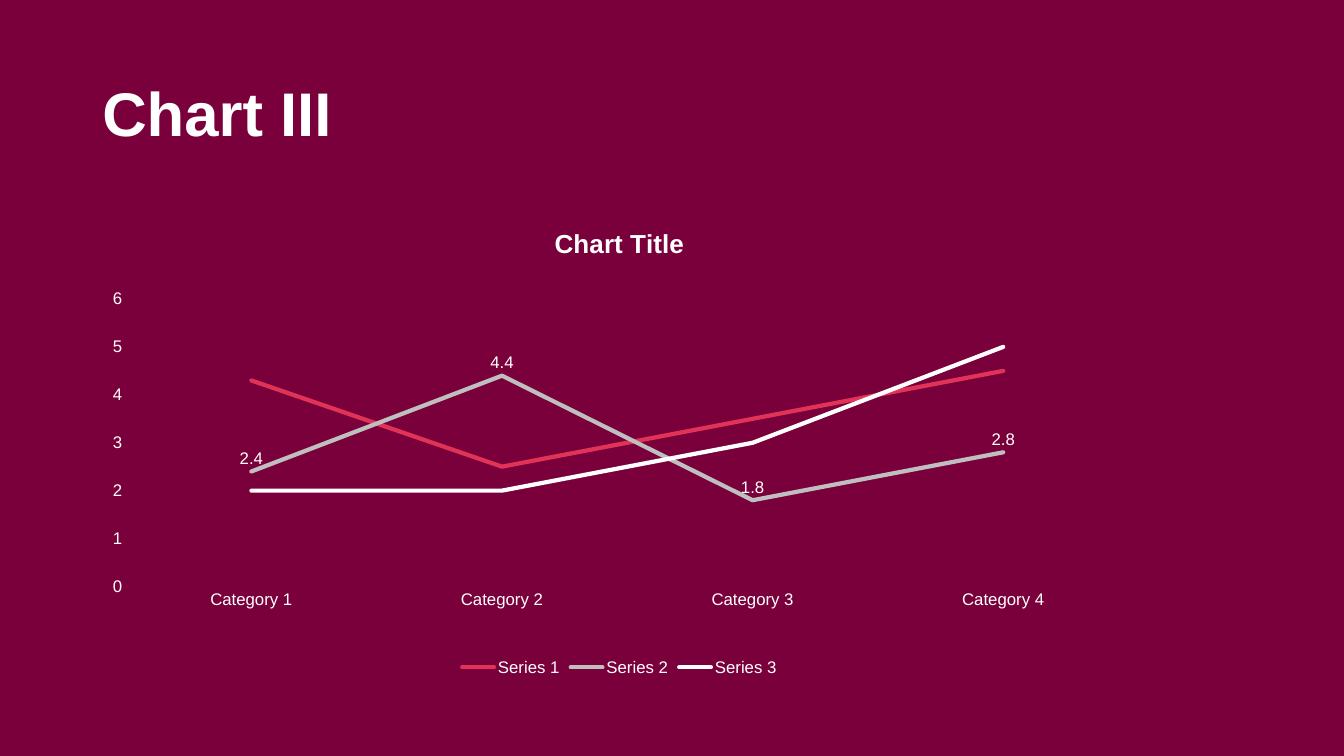
from lxml import etree
from pptx import Presentation
from pptx.chart.data import CategoryChartData
from pptx.dml.color import RGBColor
from pptx.enum.chart import (XL_CHART_TYPE, XL_LABEL_POSITION, XL_LEGEND_POSITION,
                             XL_MARKER_STYLE, XL_TICK_MARK)
from pptx.enum.text import MSO_ANCHOR
from pptx.oxml.ns import qn
from pptx.util import Pt

COLORS = {"background": "7A003B", "text": "FFFFFF"}
FONT = "Arial"
SERIES = [
    ("Series 1", (4.3, 2.5, 3.5, 4.5), "E03357"),
    ("Series 2", (2.4, 4.4, 1.8, 2.8), "BFBFBF"),
    ("Series 3", (2, 2, 3, 5), "FEFFFE"),
]
PLOT_LAYOUT = [("layoutTarget", "inner"), ("xMode", "edge"), ("yMode", "edge"),
               ("x", 0.032), ("y", 0.195), ("w", 0.951), ("h", 0.607)]


def style_font(font, size, bold=False):
    font.name = FONT
    font.size = Pt(size)
    font.bold = bold
    font.color.rgb = RGBColor.from_string(COLORS["text"])


prs = Presentation()
prs.slide_width, prs.slide_height = Pt(960), Pt(540)
slide = prs.slides.add_slide(prs.slide_layouts[6])
slide.background.fill.solid()
slide.background.fill.fore_color.rgb = RGBColor.from_string(COLORS["background"])

# Line chart
data = CategoryChartData()
data.categories = [f"Category {number}" for number in range(1, 5)]
for name, values, _ in SERIES:
    data.add_series(name, values)
chart = slide.shapes.add_chart(XL_CHART_TYPE.LINE, Pt(66), Pt(147.6), Pt(753),
                               Pt(338.4), data).chart
style_font(chart.font, 10)

chart.has_title = True
chart_heading = chart.chart_title.text_frame
chart_heading.text = "Chart Title"
style_font(chart_heading.paragraphs[0].runs[0].font, 18.6, bold=True)

chart.has_legend = True
chart.legend.position = XL_LEGEND_POSITION.BOTTOM
chart.legend.include_in_layout = False
style_font(chart.legend.font, 12)

for axis in (chart.category_axis, chart.value_axis):
    axis.has_major_gridlines = False
    axis.major_tick_mark = axis.minor_tick_mark = XL_TICK_MARK.NONE
    axis.format.line.fill.background()
    style_font(axis.tick_labels.font, 12)
chart.value_axis.minimum_scale = 0
chart.value_axis.maximum_scale = 6
chart.value_axis.major_unit = 1

plot = chart.plots[0]
plot.vary_by_categories = False
for series, (_, _, color) in zip(plot.series, SERIES):
    series.smooth = False
    series.marker.style = XL_MARKER_STYLE.NONE
    series.format.line.width = Pt(3)
    series.format.line.color.rgb = RGBColor.from_string(color)
    series.format.line._get_or_add_ln().set("cap", "rnd")

value_labels = plot.series[1].data_labels
value_labels.show_value = True
value_labels.position = XL_LABEL_POSITION.ABOVE
style_font(value_labels.font, 12)

# Fixed inner plot area
plot_area = chart._chartSpace.chart.plotArea
for automatic_layout in plot_area.findall(qn("c:layout")):
    plot_area.remove(automatic_layout)
layout = etree.Element(qn("c:layout"))
manual_layout = etree.SubElement(layout, qn("c:manualLayout"))
for tag, value in PLOT_LAYOUT:
    etree.SubElement(manual_layout, qn(f"c:{tag}")).set("val", str(value))
plot_area.insert(0, layout)

# Slide title
heading = slide.shapes.add_textbox(Pt(66), Pt(56), Pt(703.5), Pt(104.4)).text_frame
heading.word_wrap = True
heading.vertical_anchor = MSO_ANCHOR.TOP
heading.text = "Chart III"
heading.paragraphs[0].line_spacing = 0.9
style_font(heading.paragraphs[0].runs[0].font, 44, bold=True)

prs.save("out.pptx")
